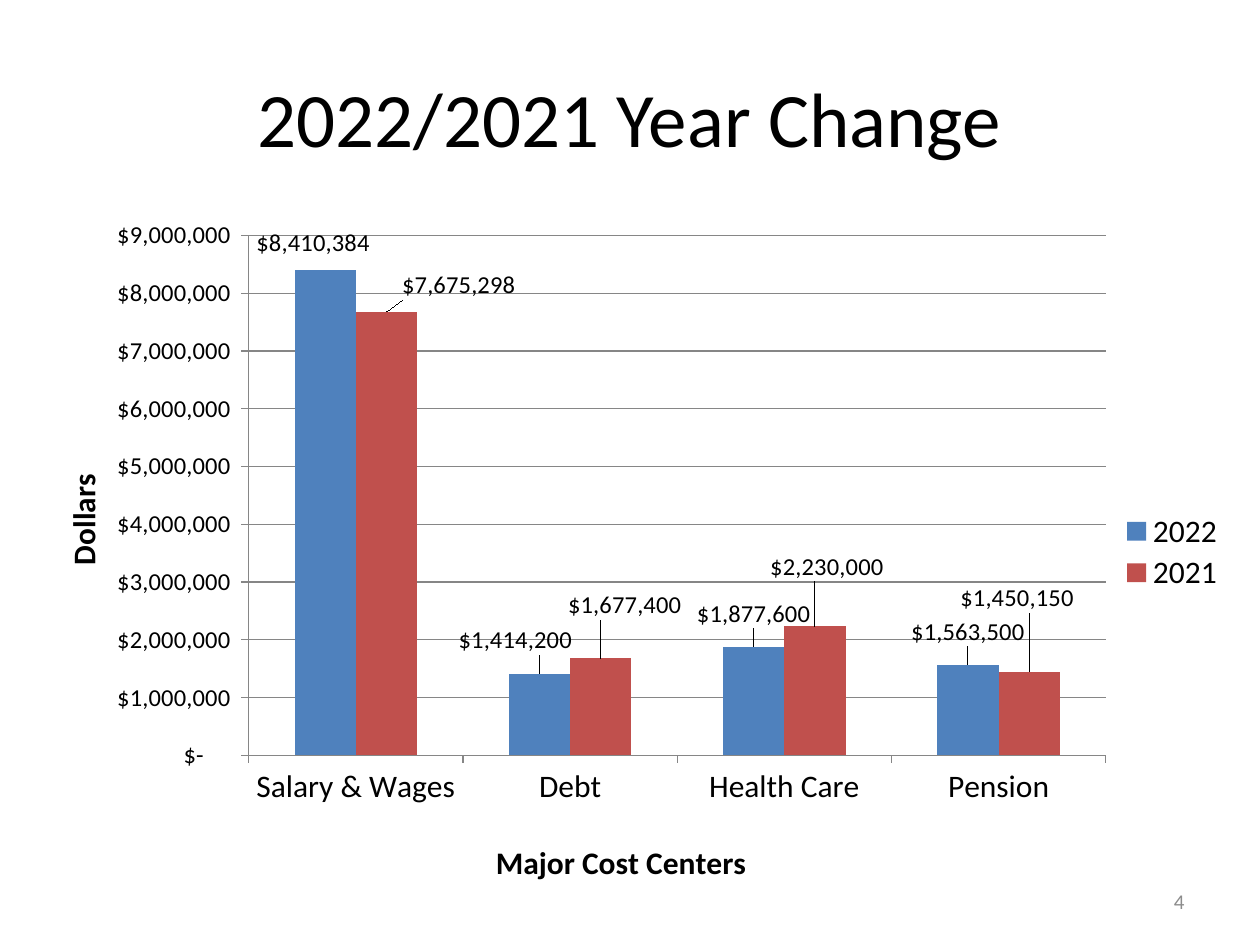
import dataclasses

import pptx
import pptx.chart.data
import pptx.dml.color
import pptx.enum.chart
import pptx.enum.text
import pptx.oxml
import pptx.oxml.ns
import pptx.util
from pptx.util import Inches


@dataclasses.dataclass(frozen=True)
class Theme:
    font: str = "Calibri"
    text: str = "000000"
    muted: str = "8C8C8C"
    line: str = "868686"
    series: tuple = ("4F81BD", "C0504D")
    title_size: int = 44
    chart_size: int = 18
    label_size: int = 14
    number_size: int = 12


THEME = Theme()
CATEGORIES = ("Salary & Wages", "Debt", "Health Care", "Pension")
SERIES = {
    "2022": (8410384, 1414200, 1877600, 1563500),
    "2021": (7675298, 1677400, 2230000, 1450150),
}
LABEL_OFFSETS = {
    "2022": ((-0.01, -0.01), (-0.02, -0.02), (0, -0.02), (0, -0.02)),
    "2021": ((0.06, -0.01), (0.02, -0.05), (0.01, -0.06), (-0.01, -0.08)),
}
LABEL_FORMAT = '"$"#,##0'
AXIS_FORMAT = '_("$"* #,##0_);_("$"* \\(#,##0\\);_("$"* "-"??_);_(@_)'


def apply(target, values):
    for name, value in values.items():
        setattr(target, name, value)


def color(value):
    return pptx.dml.color.RGBColor.from_string(value)


def format_font(font, size, value=THEME.text, bold=False):
    apply(font, {"name": THEME.font, "size": pptx.util.Pt(size), "bold": bold})
    font.color.rgb = color(value)


def add_chart_element(parent, index, body):
    namespace = pptx.oxml.ns.nsdecls("c")
    tag, content = body
    parent.insert(index, pptx.oxml.parse_xml(f"<c:{tag} {namespace}{content}"))


def set_layout(parent, index, **values):
    for existing in parent.findall(pptx.oxml.ns.qn("c:layout")):
        parent.remove(existing)
    content = "".join(f'<c:{name} val="{value}"/>' for name, value in values.items())
    add_chart_element(parent, index, (
        "layout", f"><c:manualLayout>{content}</c:manualLayout></c:layout>"))


def set_text(shape, text, size, value, alignment):
    frame = shape.text_frame
    apply(frame, {
        "text": text,
        "word_wrap": True,
        "vertical_anchor": pptx.enum.text.MSO_ANCHOR.MIDDLE,
    })
    paragraph = frame.paragraphs[0]
    paragraph.alignment = alignment
    format_font(paragraph.runs[0].font, size, value)


def place_title(slide, left, top, width, height):
    title = slide.shapes.title
    apply(title, {"left": left, "top": top, "width": width, "height": height})
    set_text(title, "2022/2021 Year Change", THEME.title_size, THEME.text,
             pptx.enum.text.PP_ALIGN.CENTER)


def place_number(slide, left, top, width, height):
    box = slide.shapes.add_textbox(left, top, width, height)
    set_text(box, "4", THEME.number_size, THEME.muted,
             pptx.enum.text.PP_ALIGN.RIGHT)


def format_axis(axis, title, size, x, y):
    apply(axis, {
        "has_title": True,
        "major_tick_mark": pptx.enum.chart.XL_TICK_MARK.OUTSIDE,
        "minor_tick_mark": pptx.enum.chart.XL_TICK_MARK.NONE,
    })
    frame = axis.axis_title.text_frame
    frame.text = title
    format_font(frame.paragraphs[0].runs[0].font, THEME.chart_size, bold=True)
    set_layout(axis.axis_title.element, 1, xMode="edge", yMode="edge", x=x, y=y)
    format_font(axis.tick_labels.font, size)
    axis.format.line.color.rgb = color(THEME.line)


def format_series(series, fill):
    apply(series, {"invert_if_negative": False})
    series.format.fill.solid()
    series.format.fill.fore_color.rgb = color(fill)
    position = pptx.enum.chart.XL_LABEL_POSITION.OUTSIDE_END
    apply(series.data_labels, {
        "show_value": True,
        "number_format": LABEL_FORMAT,
        "number_format_is_linked": False,
        "position": position,
    })
    format_font(series.data_labels.font, THEME.label_size)
    for index, (x, y) in enumerate(LABEL_OFFSETS[series.name]):
        label = series.points[index].data_label
        format_font(label.font, THEME.label_size)
        label.position = position
        element = series.data_labels._element.xpath(f"c:dLbl[c:idx/@val='{index}']")[0]
        set_layout(element, 1, x=x, y=y)
        code = LABEL_FORMAT.replace('"', "&quot;")
        add_chart_element(element, 2, (
            "numFmt", f' formatCode="{code}" sourceLinked="0"/>'))


def place_chart(slide, left, top, width, height):
    data = pptx.chart.data.CategoryChartData(number_format=LABEL_FORMAT)
    data.categories = CATEGORIES
    for name, values in SERIES.items():
        data.add_series(name, values)
    chart = slide.shapes.add_chart(
        pptx.enum.chart.XL_CHART_TYPE.COLUMN_CLUSTERED,
        left, top, width, height, data).chart
    apply(chart, {"has_title": False, "has_legend": True})
    format_font(chart.font, THEME.chart_size)

    plot = chart.plots[0]
    apply(plot, {"gap_width": 150, "overlap": 0, "vary_by_categories": False})
    for series, fill in zip(plot.series, THEME.series):
        format_series(series, fill)

    format_axis(chart.category_axis, "Major Cost Centers", THEME.chart_size, 0.38, 0.92)
    value_axis = chart.value_axis
    format_axis(value_axis, "Dollars", THEME.label_size, 0.02, 0.37)
    apply(value_axis, {
        "minimum_scale": 0,
        "maximum_scale": 9000000,
        "major_unit": 1000000,
        "has_major_gridlines": True,
    })
    value_axis.major_gridlines.format.line.color.rgb = color(THEME.line)
    apply(value_axis.tick_labels, {
        "number_format": AXIS_FORMAT,
        "number_format_is_linked": False,
    })

    apply(chart.legend, {
        "position": pptx.enum.chart.XL_LEGEND_POSITION.RIGHT,
        "include_in_layout": False,
    })
    format_font(chart.legend.font, THEME.chart_size)
    set_layout(chart.element.xpath(".//c:legend")[0], 1, xMode="edge", yMode="edge",
               x=0.9, y=0.43, w=0.09, h=0.13)
    set_layout(chart.element.xpath(".//c:plotArea")[0], 0, layoutTarget="inner",
               xMode="edge", yMode="edge", x=0.18, y=0.02, w=0.71, h=0.78)


def main():
    presentation = pptx.Presentation()
    apply(presentation, {"slide_width": Inches(10), "slide_height": Inches(7.5)})
    slide = presentation.slides.add_slide(presentation.slide_layouts[5])
    place_title(slide, Inches(0.5), Inches(0.3), Inches(9), Inches(1.25))
    place_chart(slide, Inches(0.25), Inches(1.75), Inches(9.58), Inches(5.33))
    place_number(slide, Inches(7.17), Inches(6.95), Inches(2.33), Inches(0.4))
    presentation.save("out.pptx")


if __name__ == "__main__":
    main()
